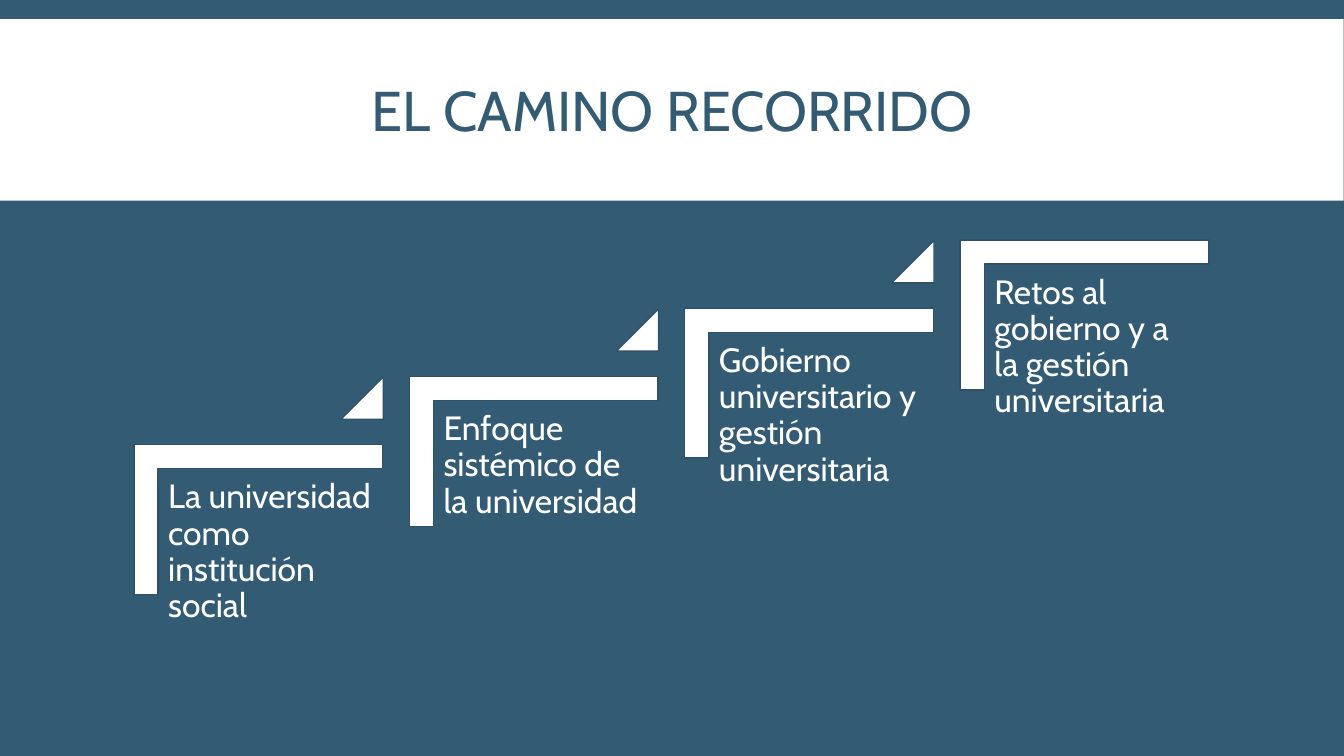
from dataclasses import dataclass

from pptx import Presentation
from pptx.dml.color import RGBColor
from pptx.enum import shapes, text
from pptx.shapes.autoshape import Shape
from pptx.shapes.shapetree import GroupShapes, SlideShapes
from pptx.util import Cm, Pt


@dataclass(frozen=True)
class Theme:
    blue: RGBColor = RGBColor(0x33, 0x5B, 0x74)
    outline: RGBColor = RGBColor(0x2E, 0x53, 0x69)
    white: RGBColor = RGBColor(0xFF, 0xFF, 0xFF)
    font: str = "Cabin"
    title_size: Pt = Pt(40)
    step_size: Pt = Pt(24)
    outline_width: Pt = Pt(1)


@dataclass(frozen=True)
class Box:
    left: float
    top: float
    width: float
    height: float

    def shifted(self, right: float, down: float) -> "Box":
        return Box(self.left + right, self.top + down, self.width, self.height)

    def lengths(self) -> tuple[Cm, Cm, Cm, Cm]:
        return Cm(self.left), Cm(self.top), Cm(self.width), Cm(self.height)


@dataclass(frozen=True)
class Step:
    label: str
    leads_on: bool = True


THEME = Theme()
SLIDE_WIDTH, SLIDE_HEIGHT = 33.87, 19.05
STEP_RIGHT, STEP_DOWN = 6.94, -1.72
BAND = Box(0, 0.48, 33.86, 4.58)
TITLE = Box(3.35, 0.79, 27.18, 4.19)
BRACKET = Box(4.62, 9.96, 3.78, 6.27)
LABEL = Box(3.99, 11.84, 5.66, 4.98)
MARKER = Box(8.59, 9.5, 1.07, 1.07)
STEPS = [
    Step("La universidad como institución social"),
    Step("Enfoque sistémico de la universidad"),
    Step("Gobierno universitario y gestión universitaria"),
    Step("Retos al gobierno y a la gestión universitaria", leads_on=False),
]


def add_white_shape(
    parent: SlideShapes | GroupShapes,
    preset: shapes.MSO_SHAPE,
    box: Box,
    adjustments: tuple[float, ...] = (),
    outlined: bool = True,
) -> Shape:
    shape = parent.add_shape(preset, *box.lengths())
    shape.shadow.inherit = False
    shape.fill.solid()
    shape.fill.fore_color.rgb = THEME.white
    if outlined:
        shape.line.color.rgb = THEME.outline
        shape.line.width = THEME.outline_width
    else:
        shape.line.fill.background()
    for index, value in enumerate(adjustments):
        shape.adjustments[index] = value
    return shape


def add_wording(
    parent: SlideShapes | GroupShapes,
    box: Box,
    wording: str,
    size: Pt,
    color: RGBColor,
    spacing: float,
    align: text.PP_ALIGN = text.PP_ALIGN.LEFT,
    anchor: text.MSO_ANCHOR = text.MSO_ANCHOR.TOP,
    inset: Cm = Cm(0.25),
) -> None:
    frame = parent.add_textbox(*box.lengths()).text_frame
    frame.word_wrap = True
    frame.vertical_anchor = anchor
    frame.margin_left = frame.margin_right = inset
    frame.margin_top = frame.margin_bottom = inset
    paragraph = frame.paragraphs[0]
    paragraph.alignment = align
    paragraph.line_spacing = spacing
    run = paragraph.add_run()
    run.text = wording
    run.font.name = THEME.font
    run.font.size = size
    run.font.color.rgb = color


def add_step(parent: GroupShapes, step: Step, position: int) -> None:
    shift = position * STEP_RIGHT, position * STEP_DOWN
    bracket = add_white_shape(
        parent, shapes.MSO_SHAPE.CORNER, BRACKET.shifted(*shift), (0.161, 0.161)
    )
    bracket.rotation = 90
    add_wording(
        parent, LABEL.shifted(*shift), step.label, THEME.step_size, THEME.white, 0.9
    )
    if step.leads_on:
        add_white_shape(
            parent, shapes.MSO_SHAPE.ISOSCELES_TRIANGLE, MARKER.shifted(*shift), (1,)
        )


def main() -> None:
    deck = Presentation()
    deck.slide_width, deck.slide_height = Cm(SLIDE_WIDTH), Cm(SLIDE_HEIGHT)
    slide = deck.slides.add_slide(deck.slide_layouts[6])
    slide.background.fill.solid()
    slide.background.fill.fore_color.rgb = THEME.blue

    add_white_shape(slide.shapes, shapes.MSO_SHAPE.RECTANGLE, BAND, outlined=False)
    add_wording(
        slide.shapes,
        TITLE,
        "EL CAMINO RECORRIDO",
        THEME.title_size,
        THEME.blue,
        0.85,
        text.PP_ALIGN.CENTER,
        text.MSO_ANCHOR.MIDDLE,
        Cm(0.13),
    )
    staircase = slide.shapes.add_group_shape()
    for position, step in enumerate(STEPS):
        add_step(staircase.shapes, step, position)

    deck.save("out.pptx")


if __name__ == "__main__":
    main()
